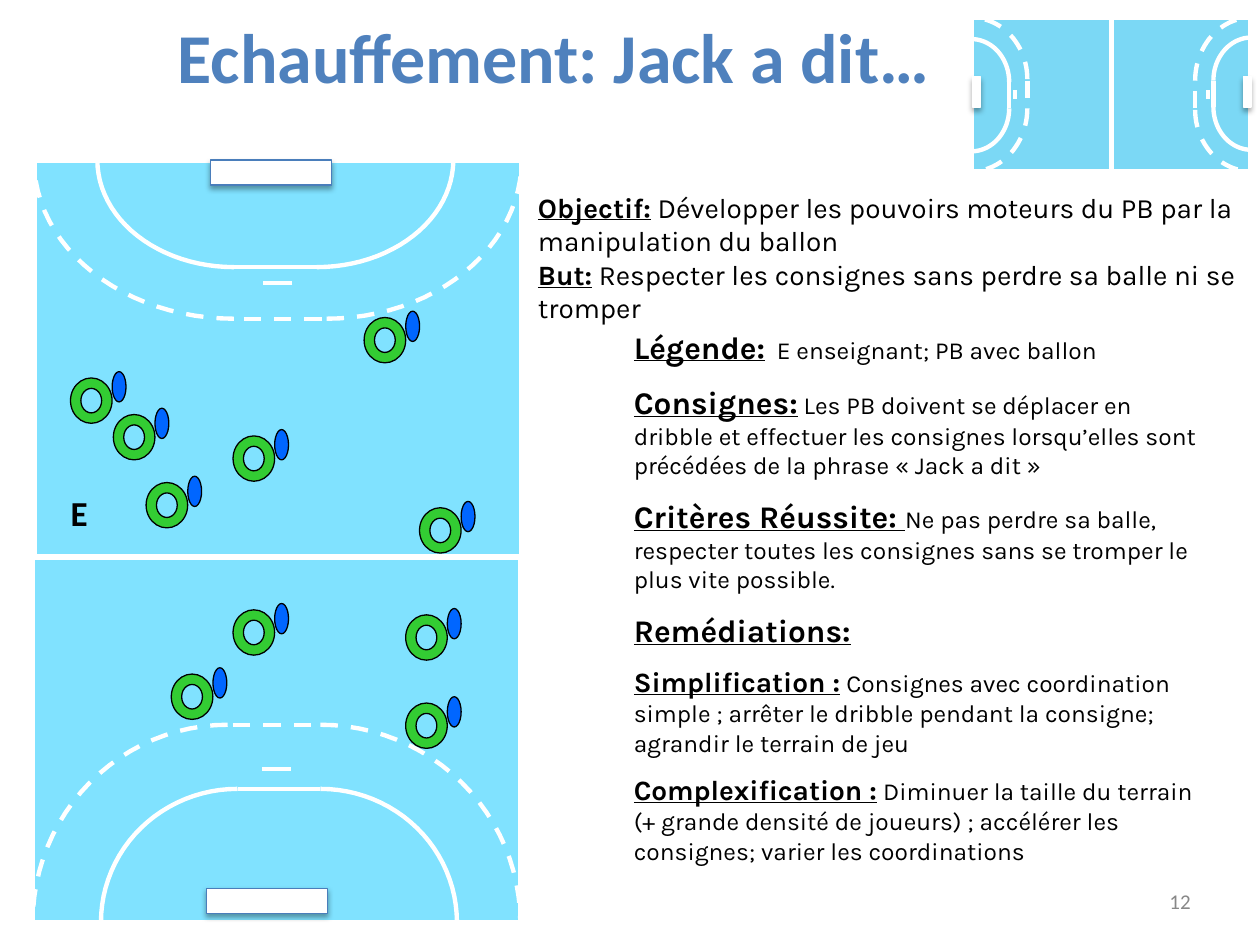
from dataclasses import dataclass
from math import cos, pi, sin

from lxml import etree
from pptx import Presentation
from pptx import util as u
from pptx.dml.color import RGBColor
from pptx.enum import dml, shapes, text
from pptx.oxml import ns

# The slide is a grid of 100 columns by 75 rows of square cells.
WIDE, HIGH = u.Inches(10), u.Inches(7.5)
CELL = WIDE / 100
WHITE, BLACK = "FFFFFF", "000000"
KIND = shapes.MSO_SHAPE


@dataclass
class Half:
    """Half court: a corner on the goal line, its width and depth vectors."""
    corner: tuple
    across: tuple
    depth: tuple
    fill: str

    def at(self, a: float, d: float) -> tuple:
        return tuple(c + a * x + d * y for c, x, y in
                     zip(self.corner, self.across, self.depth))


@dataclass
class Zone:
    """Curved line, in shares of the half court's width and depth."""
    ends: tuple
    flat: tuple
    bar: tuple
    depth: float
    dash: bool


@dataclass
class Goal:
    box: tuple
    edge: str


@dataclass
class Part:
    head: str
    body: str
    big: int
    small: int
    gap: int = 0


ZONES = [
    Zone((0.14, 0.87), (0.42, 0.59), (0.42, 0.59), 0.27, False),
    Zone((0, 1), (0.4, 0.59), (0.41, 0.57), 0.4, True),
]
HALVES = [
    Half((2.6, 73.2), (38.7, 0), (0, -39.2), "80E2FF"),
    Half((41.4, 12.7), (-38.7, 0), (0, 31.5), "80E2FF"),
    Half((99.3, 13.6), (0, -12.2), (-11.1, 0), "7BD8F5"),
    Half((77.1, 1.4), (0, 12.2), (11.1, 0), "7BD8F5"),
]
GOALS = [
    Goal((16.7, 12.7, 9.6, 2), "4A7EBB"),
    Goal((16.4, 70.5, 9.6, 2), "4A7EBB"),
    Goal((77.2, 6.1, 0.6, 2.4), WHITE),
    Goal((98.7, 6.1, 0.6, 2.4), WHITE),
]
TEAM = [(9, 32.9), (18.5, 34.6), (28.9, 25.2), (33.3, 40.3), (32.2, 48.8),
        (13.6, 53.5), (18.5, 48.4), (32.2, 55.8), (11.6, 38.3), (5.6, 30)]
AIMS = [
    Part("Objectif:", " Développer les pouvoirs moteurs du PB par la", 16, 16),
    Part("", "manipulation du ballon", 16, 16),
    Part("But:", " Respecter les consignes sans perdre sa balle ni se", 16, 16),
    Part("", "tromper", 16, 16),
]
RULES = [
    Part("Légende:", "  E enseignant; PB avec ballon", 18, 14, 10),
    Part("Consignes:", " Les PB doivent se déplacer en dribble et effectuer les "
         "consignes lorsqu’elles sont précédées de la phrase « Jack a dit »",
         18, 14, 10),
    Part("Critères Réussite: ", "Ne pas perdre sa balle, respecter toutes les "
         "consignes sans se tromper le plus vite possible.", 18, 14, 10),
    Part("Remédiations:", "", 18, 14, 10),
    Part("Simplification :", " Consignes avec coordination simple ; arrêter le "
         "dribble pendant la consigne; agrandir le terrain de jeu", 16, 14, 9),
    Part("Complexification :", " Diminuer la taille du terrain (+ grande densité "
         "de joueurs) ; accélérer les consignes; varier les coordinations",
         16, 14, 9),
]


def emu(cells) -> list:
    return [round(c * CELL) for c in cells]


def tint(code: str) -> RGBColor:
    return RGBColor.from_string(code)


def ink(line, code: str, width: float, dash: bool = False) -> None:
    line.color.rgb = tint(code)
    line.width = u.Pt(width)
    if dash:
        line.dash_style = dml.MSO_LINE.DASH


def draw(page, kind, box, fill: str, edge: str, width: float = 0.75):
    shape = page.shapes.add_shape(kind, *emu(box))
    shape.shadow.inherit = False
    shape.fill.solid()
    shape.fill.fore_color.rgb = tint(fill)
    ink(shape.line, edge, width)
    return shape


def stroke(page, start, end, dash: bool = False) -> None:
    line = page.shapes.add_connector(shapes.MSO_CONNECTOR.STRAIGHT,
                                     *emu(start), *emu(end))
    ink(line.line, WHITE, 2.5, dash)
    etree.SubElement(line._element.spPr, ns.qn("a:effectLst"))


def curve(page, half: Half, zone: Zone, flat: float, end: float) -> None:
    """Quarter ellipse from the flat part of a zone down to the goal line."""
    turns = [i * pi / 48 for i in range(25)]
    dots = [emu(half.at(flat + (end - flat) * sin(t), zone.depth * cos(t)))
            for t in turns]
    path = page.shapes.build_freeform(*dots[0])
    path.add_line_segments(dots[1:], close=False)
    shape = path.convert_to_shape()
    shape.shadow.inherit = False
    shape.fill.background()
    ink(shape.line, WHITE, 2.5, zone.dash)


def court(page, half: Half) -> None:
    xs, ys = zip(half.at(0, 0), half.at(1, 1))
    box = min(xs), min(ys), max(xs) - min(xs), max(ys) - min(ys)
    draw(page, KIND.RECTANGLE, box, half.fill, WHITE, 3)
    for zone in ZONES:
        for flat, end in zip(zone.flat, zone.ends):
            curve(page, half, zone, flat, end)
        stroke(page, *(half.at(a, zone.depth) for a in zone.bar), zone.dash)
    stroke(page, half.at(0.47, 0.31), half.at(0.53, 0.31))


def net(page, goal: Goal) -> None:
    shape = draw(page, KIND.RECTANGLE, goal.box, WHITE, goal.edge)
    glow = etree.SubElement(
        shape._element.spPr.find(ns.qn("a:effectLst")), ns.qn("a:outerShdw"),
        blurRad=str(u.Pt(3)), dist=str(u.Pt(1.8)), dir="5400000",
        rotWithShape="0")
    hue = etree.SubElement(glow, ns.qn("a:srgbClr"), val=BLACK)
    etree.SubElement(hue, ns.qn("a:alpha"), val="35000")


def player(page, x: float, y: float) -> None:
    ring = draw(page, KIND.DONUT, (x, y, 3.3, 3.6), "33CC33", BLACK)
    ring.adjustments[0] = 0.25
    draw(page, KIND.OVAL, (x + 3.3, y - 0.5, 1.1, 2.4), "0066FF", BLACK)


def place(shape, box, wrap: bool = True):
    """Set a text shape's box and margins, and return its frame."""
    shape.left, shape.top, shape.width, shape.height = emu(box)
    frame = shape.text_frame
    frame.margin_left = frame.margin_right = u.Inches(0.05)
    frame.margin_top = frame.margin_bottom = u.Inches(0.05)
    frame.word_wrap = wrap
    frame.auto_size = text.MSO_AUTO_SIZE.NONE
    frame.vertical_anchor = text.MSO_ANCHOR.TOP
    return frame


def style(para, face: str, code: str) -> None:
    para.font.name = face
    para.font.color.rgb = tint(code)


def label(shape, box, words: str, size: int, code: str, bold: bool = True,
          side=text.PP_ALIGN.LEFT) -> None:
    para = place(shape, box).paragraphs[0]
    para.text, para.alignment = words, side
    style(para, "Calibri", code)
    para.font.size, para.font.bold = u.Pt(size), bold


def prose(page, box, parts: list) -> None:
    frame = place(page.shapes.add_textbox(0, 0, 0, 0), box)
    for i, part in enumerate(parts):
        para = frame.add_paragraph() if i else frame.paragraphs[0]
        style(para, "Karla", BLACK)
        para.space_before = u.Pt(part.gap)
        for words, size, strong in ((part.head, part.big, True),
                                    (part.body, part.small, False)):
            if words:
                run = para.add_run()
                run.text, run.font.size = words, u.Pt(size)
                run.font.bold = run.font.underline = strong


def main() -> None:
    deck = Presentation()
    deck.slide_width, deck.slide_height = WIDE, HIGH
    page = deck.slides.add_slide(deck.slide_layouts.get_by_name("Title Only"))
    for half in HALVES:
        court(page, half)
    for spot in TEAM:
        player(page, *spot)
    for goal in GOALS:
        net(page, goal)
    label(page.shapes.title, (13.6, 0.6, 62.2, 7.8),
          "Echauffement: Jack a dit…", 40, "4F81BD")
    label(page.shapes.add_textbox(0, 0, 0, 0), (5.1, 38.5, 7.9, 4.3),
          "E", 20, BLACK)
    prose(page, (42.2, 14.6, 57.3, 11.6), AIMS)
    prose(page, (49.8, 25.5, 46.5, 44.1), RULES)
    label(page.shapes.add_textbox(0, 0, 0, 0), (92.2, 70, 2.8, 2.9),
          "12", 12, "888888", False, text.PP_ALIGN.RIGHT)
    deck.save("out.pptx")


if __name__ == "__main__":
    main()
